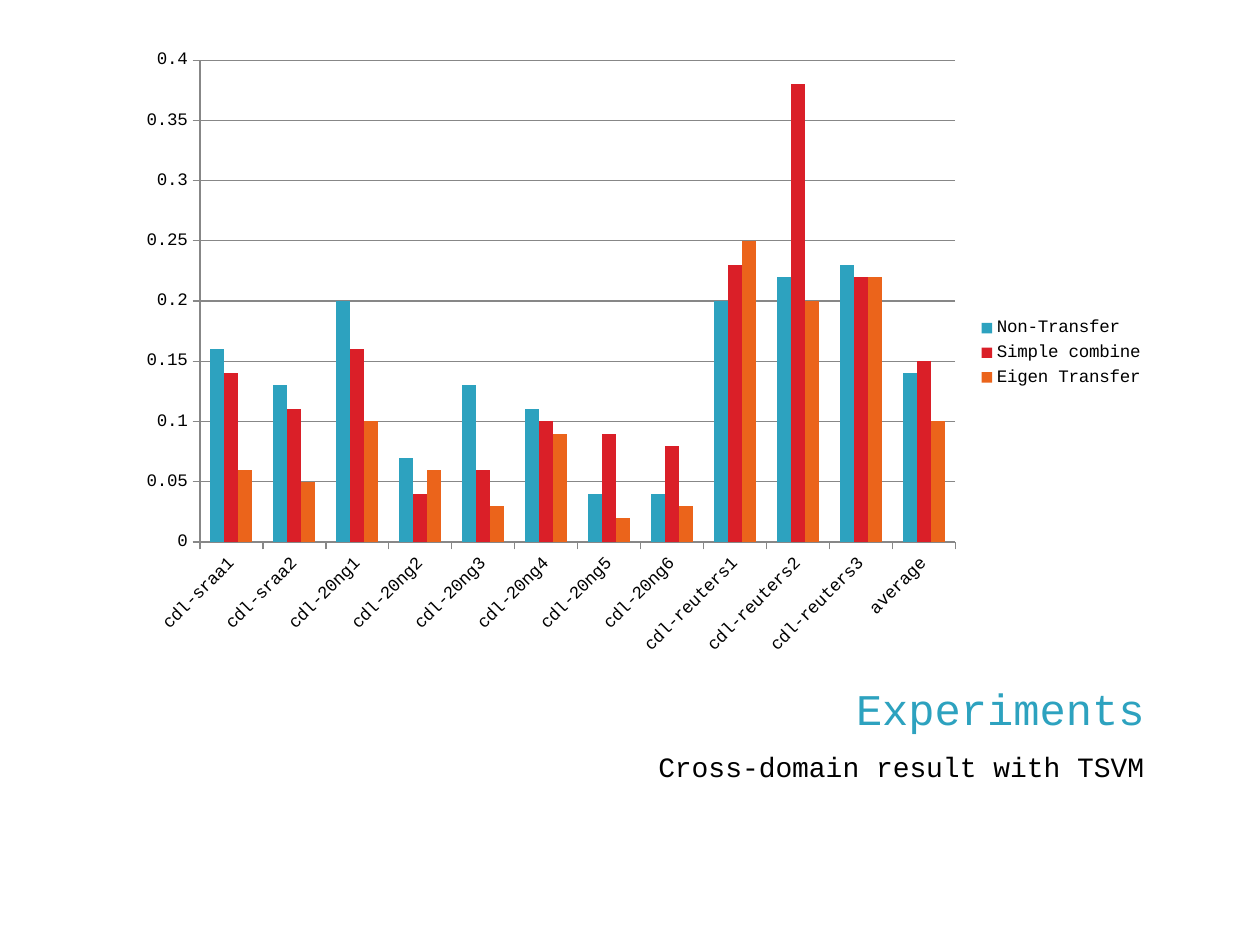
from pptx import Presentation
from pptx.chart.data import CategoryChartData
from pptx.dml.color import RGBColor
from pptx.enum.chart import XL_CHART_TYPE, XL_LEGEND_POSITION, XL_TICK_MARK
from pptx.enum.text import MSO_ANCHOR, PP_ALIGN
from pptx.util import Inches, Pt

FONT = "Courier New"
TEAL, RED, ORANGE = "2DA2BF", "DA1F28", "EB641B"
BLACK, GRAY = "000000", "878787"

CATEGORIES = (
    ["cdl-sraa1", "cdl-sraa2"]
    + [f"cdl-20ng{number}" for number in range(1, 7)]
    + [f"cdl-reuters{number}" for number in range(1, 4)]
    + ["average"]
)
SERIES = [
    ("Non-Transfer", TEAL,
     [0.16, 0.13, 0.2, 0.07, 0.13, 0.11, 0.04, 0.04, 0.2, 0.22, 0.23, 0.14]),
    ("Simple combine", RED,
     [0.14, 0.11, 0.16, 0.04, 0.06, 0.1, 0.09, 0.08, 0.23, 0.38, 0.22, 0.15]),
    ("Eigen Transfer", ORANGE,
     [0.06, 0.05, 0.1, 0.06, 0.03, 0.09, 0.02, 0.03, 0.25, 0.2, 0.22, 0.1]),
]


def color(value):
    """Turn a hex string into a colour."""
    return RGBColor.from_string(value)


def style_font(font, size, value):
    """Set the typeface, size and colour of a font."""
    font.name = FONT
    font.size = Pt(size)
    font.color.rgb = color(value)


def style_line(line):
    """Give a chart line the common gray stroke."""
    line.color.rgb = color(GRAY)
    line.width = Pt(0.75)


def add_text(slide, box, text, size, value, anchor, top_inset):
    """Add one right-aligned line of text."""
    shape = slide.shapes.add_textbox(*map(Inches, box))
    frame = shape.text_frame
    frame.word_wrap = True
    frame.vertical_anchor = anchor
    frame.margin_top = Inches(top_inset)
    frame.margin_bottom = 0
    paragraph = frame.paragraphs[0]
    paragraph.alignment = PP_ALIGN.RIGHT
    run = paragraph.add_run()
    run.text = text
    style_font(run.font, size, value)


def style_axis(axis):
    """Style an axis line and its tick marks."""
    axis.major_tick_mark = XL_TICK_MARK.OUTSIDE
    axis.minor_tick_mark = XL_TICK_MARK.NONE
    style_line(axis.format.line)


def add_result_chart(slide, box):
    """Add the clustered columns of the results."""
    data = CategoryChartData()
    data.categories = CATEGORIES
    for name, _, values in SERIES:
        data.add_series(name, values)
    frame = slide.shapes.add_chart(
        XL_CHART_TYPE.COLUMN_CLUSTERED, *map(Inches, box), data)
    chart = frame.chart
    chart.has_title = False
    style_font(chart.font, 10, BLACK)

    chart.has_legend = True
    chart.legend.position = XL_LEGEND_POSITION.RIGHT
    chart.legend.include_in_layout = False

    style_axis(chart.category_axis)
    value_axis = chart.value_axis
    style_axis(value_axis)
    value_axis.minimum_scale = 0
    value_axis.maximum_scale = 0.4
    value_axis.major_unit = 0.05
    value_axis.has_major_gridlines = True
    style_line(value_axis.major_gridlines.format.line)

    plot = chart.plots[0]
    plot.gap_width = 150
    plot.overlap = 0
    plot.vary_by_categories = False
    for series, (_, value, _) in zip(plot.series, SERIES):
        series.format.fill.solid()
        series.format.fill.fore_color.rgb = color(value)
        series.invert_if_negative = False


def main():
    """Build and save the slide."""
    presentation = Presentation()
    presentation.slide_width = Inches(10)
    presentation.slide_height = Inches(7.5)
    slide = presentation.slides.add_slide(presentation.slide_layouts[6])
    add_text(slide, (1, 5.33, 8.18, 0.5), "Experiments", 25, TEAL,
             MSO_ANCHOR.BOTTOM, 0)
    add_text(slide, (4.83, 5.86, 4.35, 1), "Cross-domain result with TSVM", 16,
             BLACK, MSO_ANCHOR.TOP, 0.09)
    add_result_chart(slide, (1, 0.3, 8.18, 5))
    presentation.save("out.pptx")


if __name__ == "__main__":
    main()
